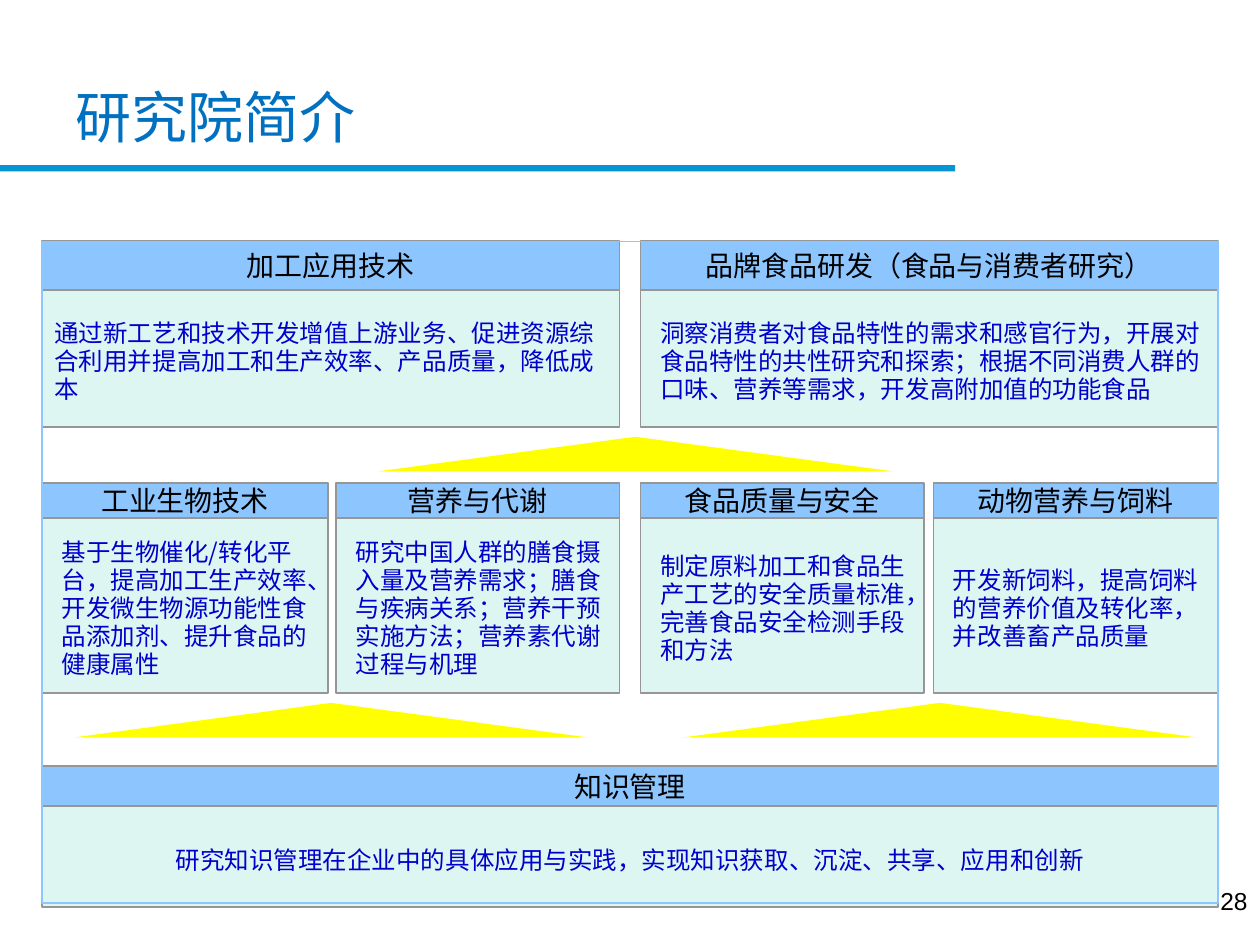
from dataclasses import dataclass

from lxml.etree import SubElement
from pptx import Presentation
from pptx.dml.color import RGBColor
from pptx.enum.shapes import MSO_SHAPE as Preset
from pptx.enum.text import MSO_ANCHOR as Anchor, PP_ALIGN as Align
from pptx.oxml.ns import qn
from pptx.util import Pt

CJK = "Noto Sans CJK SC"
LEFT, WIDTH = 24, 672
HALF, SECOND_HALF = 330, 366


@dataclass
class Row:
    top: float
    head_height: float
    body_height: float


@dataclass
class Panel:
    row: Row
    left: float
    width: float
    heading: str
    body: str
    inset: float = 11.2
    align: Align = Align.LEFT


@dataclass
class Peak:
    left: float
    top: float


APPLICATIONS = Row(137.5, 28.1, 78.4)
DISCIPLINES = Row(275.8, 20.1, 100.1)
FOUNDATION = Row(437.6, 23.2, 57.6)

PANELS = [
    Panel(APPLICATIONS, LEFT, HALF, "加工应用技术",
          "通过新工艺和技术开发增值上游业务、促进资源综合利用并提高加工和生产效率、产品质量，降低成本",
          inset=7.2),
    Panel(APPLICATIONS, SECOND_HALF, HALF, "品牌食品研发（食品与消费者研究）",
          "洞察消费者对食品特性的需求和感官行为，开展对食品特性的共性研究和探索；"
          "根据不同消费人群的口味、营养等需求，开发高附加值的功能食品"),
    Panel(FOUNDATION, LEFT, WIDTH, "知识管理",
          "研究知识管理在企业中的具体应用与实践，实现知识获取、沉淀、共享、应用和创新",
          inset=7.2, align=Align.CENTER),
    Panel(DISCIPLINES, LEFT, 163.4, "工业生物技术",
          "基于生物催化/转化平台，提高加工生产效率、开发微生物源功能性食品添加剂、提升食品的健康属性"),
    Panel(DISCIPLINES, 192, 162, "营养与代谢",
          "研究中国人群的膳食摄入量及营养需求；膳食与疾病关系；营养干预实施方法；营养素代谢过程与机理"),
    Panel(DISCIPLINES, SECOND_HALF, 162, "食品质量与安全",
          "制定原料加工和食品生产工艺的安全质量标准，完善食品安全检测手段和方法"),
    Panel(DISCIPLINES, 533.4, 162.6, "动物营养与饲料",
          "开发新饲料，提高饲料的营养价值及转化率，并改善畜产品质量"),
]
PEAKS = [Peak(216, 249.6), Peak(42, 401.6), Peak(390, 401.6)]


def colour(value: str) -> RGBColor:
    return RGBColor.from_string(value)


def add_box(shapes, left: float, top: float, width: float, height: float,
            fill: str = "", line: str = "", line_width: float = 1):
    box = shapes.add_shape(Preset.RECTANGLE, Pt(left), Pt(top), Pt(width), Pt(height))
    box.shadow.inherit = False
    if fill:
        box.fill.solid()
        box.fill.fore_color.rgb = colour(fill)
    else:
        box.fill.background()
    if line:
        box.line.color.rgb = colour(line)
        box.line.width = Pt(line_width)
    else:
        box.line.fill.background()
    return box


def set_insets(frame, left: float, top: float, right: float, bottom: float) -> None:
    frame.margin_left, frame.margin_top = Pt(left), Pt(top)
    frame.margin_right, frame.margin_bottom = Pt(right), Pt(bottom)


def write(frame, text: str, size: float, ink: str, align: Align,
          anchor: Anchor = Anchor.MIDDLE, font: str = CJK, spacing: float = 0) -> None:
    frame.word_wrap = True
    frame.vertical_anchor = anchor
    paragraph = frame.paragraphs[0]
    paragraph.alignment = align
    if spacing:
        paragraph.line_spacing = Pt(spacing)
    run = paragraph.add_run()
    run.text = text
    run.font.size = Pt(size)
    run.font.color.rgb = colour(ink)
    run.font.name = font
    SubElement(run.font._element, qn("a:ea")).set("typeface", CJK)


def add_panel(shapes, panel: Panel) -> None:
    row = panel.row
    head = add_box(shapes, panel.left, row.top, panel.width, row.head_height,
                   "8DC6FF", "969696")
    set_insets(head.text_frame, 0, 0, 0, 0)
    write(head.text_frame, panel.heading, 16, "000000", Align.CENTER)
    body = add_box(shapes, panel.left, row.top + row.head_height, panel.width,
                   row.body_height, "DEF6F1", "969696")
    set_insets(body.text_frame, panel.inset, 7.2, 7.2, 3.6)
    write(body.text_frame, panel.body, 14, "0000CC", panel.align, spacing=16)


def add_peak(shapes, peak: Peak, width: float = 294.2, height: float = 19.8) -> None:
    base = peak.top + height
    builder = shapes.build_freeform(Pt(peak.left + width), Pt(base))
    builder.add_line_segments([(Pt(peak.left), Pt(base)),
                               (Pt(peak.left + width / 2), Pt(peak.top))])
    outline = builder.convert_to_shape()
    outline.shadow.inherit = False
    outline.fill.solid()
    outline.fill.fore_color.rgb = colour("FFFF00")
    outline.line.fill.background()


def main() -> None:
    deck = Presentation()
    deck.slide_width, deck.slide_height = Pt(720), Pt(540)
    shapes = deck.slides.add_slide(deck.slide_layouts[6]).shapes

    add_box(shapes, 0, 94.3, 545.8, 3.6, "0595D4")
    title = shapes.add_textbox(Pt(36), Pt(21.6), Pt(648), Pt(90))
    write(title.text_frame, "研究院简介", 32, "0070C0", Align.LEFT, font="Arial")
    page_number = shapes.add_textbox(Pt(552), Pt(502.6), Pt(168), Pt(37.4))
    write(page_number.text_frame, "28", 14, "000000", Align.RIGHT, Anchor.TOP, "Arial")

    for panel in PANELS:
        add_panel(shapes, panel)
    for peak in PEAKS:
        add_peak(shapes, peak)
    add_box(shapes, LEFT, 138, WIDTH, 378, line="8DC6FF", line_width=0.75)

    deck.save("out.pptx")


if __name__ == "__main__":
    main()
